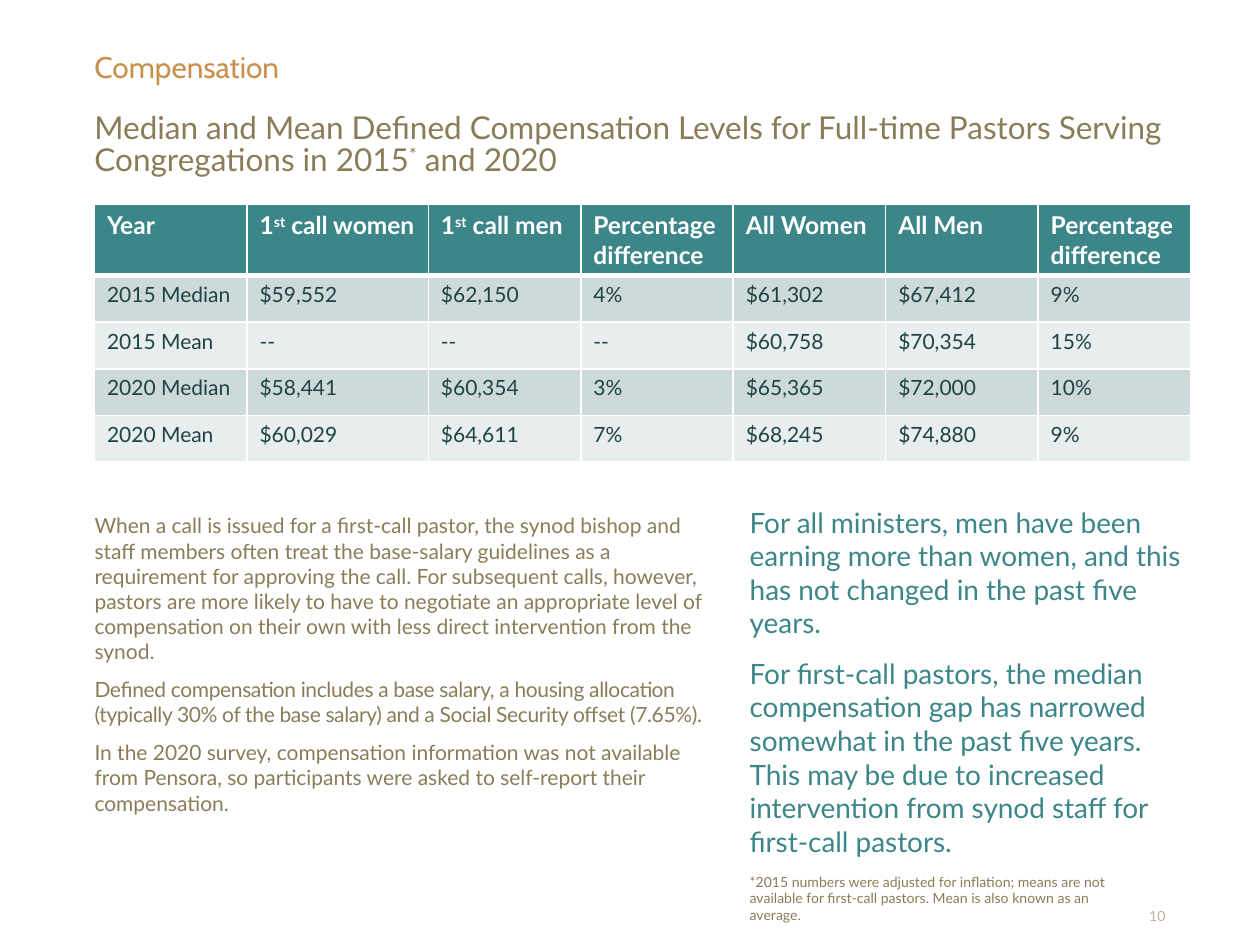
import pptx
import pptx.dml.color
import pptx.enum.text
import pptx.oxml
import pptx.util
from pptx.util import Inches

RGBColor = pptx.dml.color.RGBColor
TEAL = RGBColor(0x3C, 0x86, 0x89)
DARK_TEAL = RGBColor(0x1E, 0x43, 0x44)
OLIVE = RGBColor(0x89, 0x7C, 0x57)
PALE_OLIVE = RGBColor(0xBC, 0xB2, 0x96)
ORANGE = RGBColor(0xC8, 0x90, 0x4D)
BAND = RGBColor(0xCE, 0xD9, 0xDA)
PALE_BAND = RGBColor(0xE8, 0xED, 0xED)
WHITE = RGBColor(0xFF, 0xFF, 0xFF)

BORDER = (
    '<a:{side} xmlns:a="http://schemas.openxmlformats.org/drawingml/2006/main" w="{width}">'
    '<a:solidFill><a:srgbClr val="{color}"/></a:solidFill></a:{side}>'
)


class SlideBuilder:
    """Holds the type style and the page being filled."""

    font = "Lato"

    def __init__(self, page):
        self.page = page

    def fill_paragraph(self, para, text, size, color, font=None, bold=False, tracking=0):
        """Fill a paragraph; text between ^ marks is superscript."""
        para.font.name = font or self.font
        para.font.size = pptx.util.Pt(size)
        para.font.bold = bold
        para.font.color.rgb = color
        for index, part in enumerate(text.split("^")):
            span = para.add_run()
            span.text = part
            properties = span._r.get_or_add_rPr()
            if index % 2:
                properties.set("baseline", "30000")
            if tracking:
                properties.set("spc", str(int(tracking * 100)))

    def text(self, left, top, width, height, paragraphs, size, color, font=None,
             gap=0, line_spacing=None, align=None, anchor=None, tracking=()):
        box = self.page.shapes.add_textbox(
            Inches(left), Inches(top), Inches(width), Inches(height))
        frame = box.text_frame
        frame.word_wrap = True
        frame.margin_left = frame.margin_right = 0
        frame.margin_top = frame.margin_bottom = 0
        frame.vertical_anchor = anchor
        for index, text in enumerate(paragraphs):
            para = frame.add_paragraph() if index else frame.paragraphs[0]
            if index:
                para.space_before = pptx.util.Pt(gap)
            para.alignment = align
            para.line_spacing = line_spacing
            spacing = tracking[index] if tracking else 0
            self.fill_paragraph(para, text, size, color, font, tracking=spacing)

    def borders(self, cell, bottom_width):
        properties = cell._tc.get_or_add_tcPr()
        widths = {"lnL": 1, "lnR": 1, "lnT": 1, "lnB": bottom_width}
        for position, (side, width) in enumerate(widths.items()):
            line = BORDER.format(side=side, width=pptx.util.Pt(width), color=WHITE)
            properties.insert(position, pptx.oxml.parse_xml(line))

    def table(self, left, top, widths, heights, rows):
        frame = self.page.shapes.add_table(
            len(rows), len(widths), Inches(left), Inches(top),
            Inches(sum(widths)), Inches(sum(heights)))
        table = frame.table
        for column, width in zip(table.columns, widths):
            column.width = Inches(width)
        for row_index, (row, height) in enumerate(zip(rows, heights)):
            table.rows[row_index].height = Inches(height)
            header = row_index == 0
            fill = TEAL if header else BAND if row_index % 2 else PALE_BAND
            for column_index, text in enumerate(row):
                cell = table.cell(row_index, column_index)
                cell.fill.solid()
                cell.fill.fore_color.rgb = fill
                self.borders(cell, 3 if header else 1)
                self.fill_paragraph(cell.text_frame.paragraphs[0], text,
                                    14 if header else 12,
                                    WHITE if header else DARK_TEAL, bold=header)


def main():
    deck = pptx.Presentation()
    deck.slide_width, deck.slide_height = Inches(10), Inches(7.5)
    builder = SlideBuilder(deck.slides.add_slide(deck.slide_layouts[6]))
    left, right = 0.75, 5.95

    # Headings
    builder.text(left, 0.43, 8.5, 0.21, ["Compensation"], 17, ORANGE,
                 font="Cabin", line_spacing=0.85)
    builder.text(left, 0.9, 8.5, 0.7, [
        "Median and Mean Defined Compensation Levels for Full-time Pastors "
        "Serving Congregations in 2015^*^ and 2020"], 18, OLIVE, line_spacing=0.85)

    # Compensation table
    builder.table(left, 1.62, [1.21, 1.44] + [1.21] * 5, [0.55] + [0.37] * 4, [
        ["Year", "1^st^ call women", "1^st^ call men", "Percentage difference",
         "All Women", "All Men", "Percentage difference"],
        ["2015 Median", "$59,552", "$62,150", "4%", "$61,302", "$67,412", "9%"],
        ["2015 Mean", "--", "--", "--", "$60,758", "$70,354", "15%"],
        ["2020 Median", "$58,441", "$60,354", "3%", "$65,365", "$72,000", "10%"],
        ["2020 Mean", "$60,029", "$64,611", "7%", "$68,245", "$74,880", "9%"],
    ])

    # Background notes
    builder.text(left, 4.07, 4.98, 2.02, [
        "When a call is issued for a first-call pastor, the synod bishop and staff "
        "members often treat the base-salary guidelines as a requirement for "
        "approving the call. For subsequent calls, however, pastors are more likely "
        "to have to negotiate an appropriate level of compensation on their own with "
        "less direct intervention from the synod.",
        "Defined compensation includes a base salary, a housing allocation (typically "
        "30% of the base salary) and a Social Security offset (7.65%).",
        "In the 2020 survey, compensation information was not available from Pensora, "
        "so participants were asked to self-report their compensation.",
    ], 12, OLIVE, gap=7.2, tracking=(0, -0.2, 0))

    # Findings
    builder.text(right, 4.01, 3.52, 2.56, [
        "For all ministers, men have been earning more than women, and this has not "
        "changed in the past five years.",
        "For first-call pastors, the median compensation gap has narrowed somewhat in "
        "the past five years. This may be due to increased intervention from synod "
        "staff for first-call pastors.",
    ], 16, TEAL, gap=9.6)

    # Footnote and page number
    builder.text(right, 6.93, 3.08, 0.27, [
        "*2015 numbers were adjusted for inflation; means are not available for "
        "first-call pastors. Mean is also known as an average."], 8, OLIVE)
    builder.text(8.93, 7.21, 0.32, 0.13, ["10"], 8, PALE_OLIVE,
                 align=pptx.enum.text.PP_ALIGN.RIGHT,
                 anchor=pptx.enum.text.MSO_ANCHOR.BOTTOM)

    deck.save("out.pptx")


if __name__ == "__main__":
    main()
